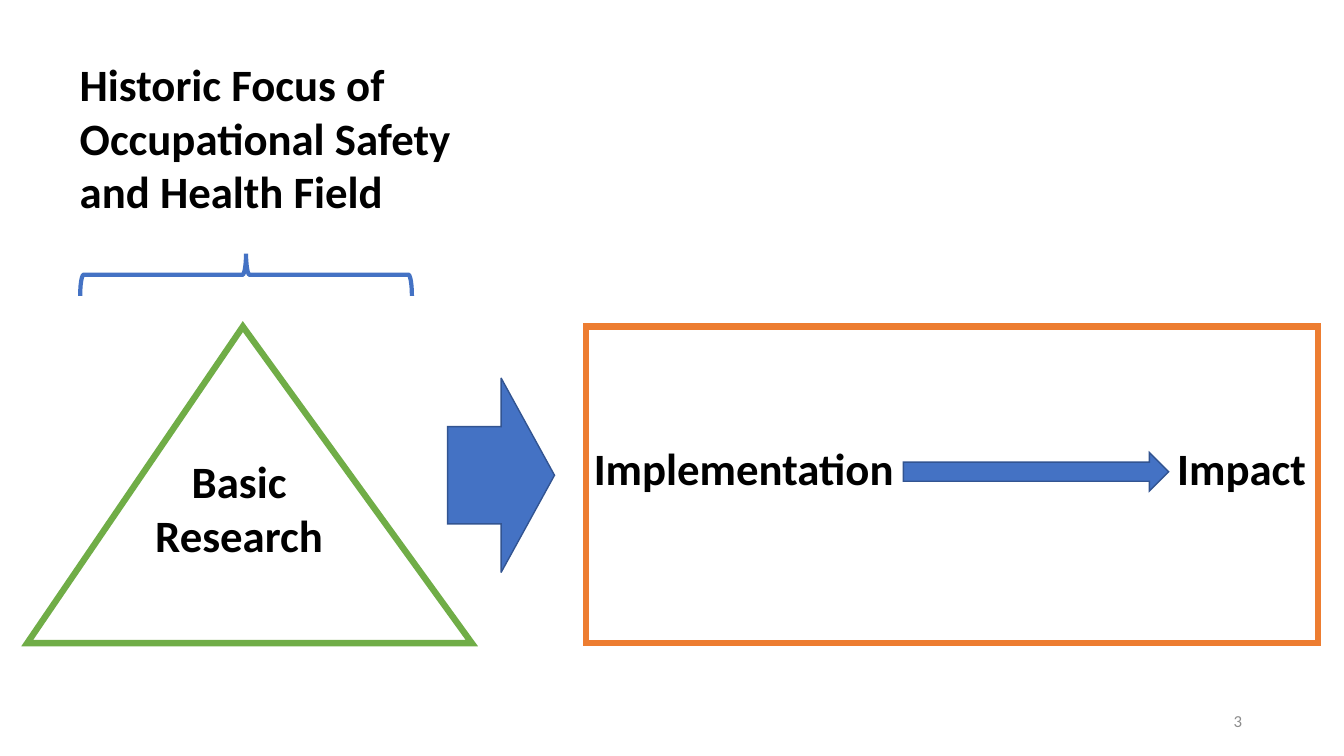
from lxml.etree import SubElement
from pptx import Presentation
from pptx.dml.color import RGBColor
from pptx.enum.shapes import MSO_SHAPE
from pptx.enum.text import MSO_ANCHOR, MSO_AUTO_SIZE, PP_ALIGN
from pptx.oxml.ns import qn
from pptx.util import Inches, Pt

COLORS = {
    "white": "FFFFFF", "black": "000000", "gray": "8C8C8C", "blue": "4472C4",
    "navy": "325491", "green": "70AD47", "orange": "ED7D31",
}


def color(name):
    return RGBColor.from_string(COLORS[name])


class FlowSlide:
    """Holds the text style and the slide; places are percent shares of its size."""

    font = "Calibri"

    def __init__(self, prs):
        self.size = prs.slide_width, prs.slide_height
        self.s = prs.slides.add_slide(prs.slide_layouts[5])

    def box(self, left, top, width, height):
        w, h = self.size
        return [round(share * side / 100) for share, side
                in ((left, w), (top, h), (width, w), (height, h))]

    def set_text(self, sp, text, size=32, ink="black", bold=True,
                 align=PP_ALIGN.LEFT, anchor=MSO_ANCHOR.TOP):
        tf = sp.text_frame
        tf.text = text
        tf.word_wrap = True
        tf.auto_size = MSO_AUTO_SIZE.NONE
        tf.vertical_anchor = anchor
        for p in tf.paragraphs:
            p.alignment = align
            for r in p.runs:
                r.font.name, r.font.size, r.font.bold = self.font, Pt(size), bold
                r.font.color.rgb = color(ink)

    def title(self, text, *place):
        sp = self.s.shapes.title
        sp.left, sp.top, sp.width, sp.height = self.box(*place)
        self.set_text(sp, text)

    def label(self, text, *place, **style):
        self.set_text(self.s.shapes.add_textbox(*self.box(*place)), text, **style)

    def shape(self, kind, *place, line, weight, fill=None):
        sp = self.s.shapes.add_shape(kind, *self.box(*place))
        sp.shadow.inherit = False
        if fill:
            sp.fill.solid()
            sp.fill.fore_color.rgb = color(fill)
        else:
            sp.fill.background()
        sp.line.color.rgb = color(line)
        sp.line.width = Pt(weight)
        SubElement(sp.element.spPr.find(qn("a:ln")), qn("a:miter"), lim="800000")
        return sp

    def arrow(self, *place):
        self.shape(MSO_SHAPE.RIGHT_ARROW, *place, line="navy", weight=1, fill="blue")


def main():
    prs = Presentation()
    prs.slide_width, prs.slide_height = Inches(13.33), Inches(7.5)
    slide = FlowSlide(prs)
    panel_top, panel_height = 43.2, 41.87

    slide.title("Historic Focus of Occupational Safety and Health Field",
                5.18, 6.8, 33.76, 22.93)
    brace = slide.shape(MSO_SHAPE.LEFT_BRACE, 16.73, 14.4, 3.15, 43.87,
                        line="blue", weight=3)
    brace.rotation = 90

    triangle = slide.shape(MSO_SHAPE.ISOSCELES_TRIANGLE, 2.03, panel_top, 33.08,
                           panel_height, line="green", weight=4.5, fill="white")
    triangle.adjustments[0] = 0.485
    slide.label("Basic\nResearch", 8.8, 59.33, 18, 19.73, align=PP_ALIGN.CENTER)
    slide.arrow(33.31, 50, 7.95, 25.73)

    slide.shape(MSO_SHAPE.RECTANGLE, 43.59, panel_top, 54.46, panel_height,
                line="orange", weight=4.5, fill="white")
    slide.label("Implementation", 43.44, 57.6, 25, 8.5)
    slide.arrow(67.22, 59.87, 19.73, 5.07)
    slide.label("Impact", 86.85, 57.6, 12, 8.5)

    slide.label("3", 70.67, 92.67, 22.5, 5.33, size=12, ink="gray", bold=False,
                align=PP_ALIGN.RIGHT, anchor=MSO_ANCHOR.MIDDLE)
    prs.save("out.pptx")


if __name__ == "__main__":
    main()
